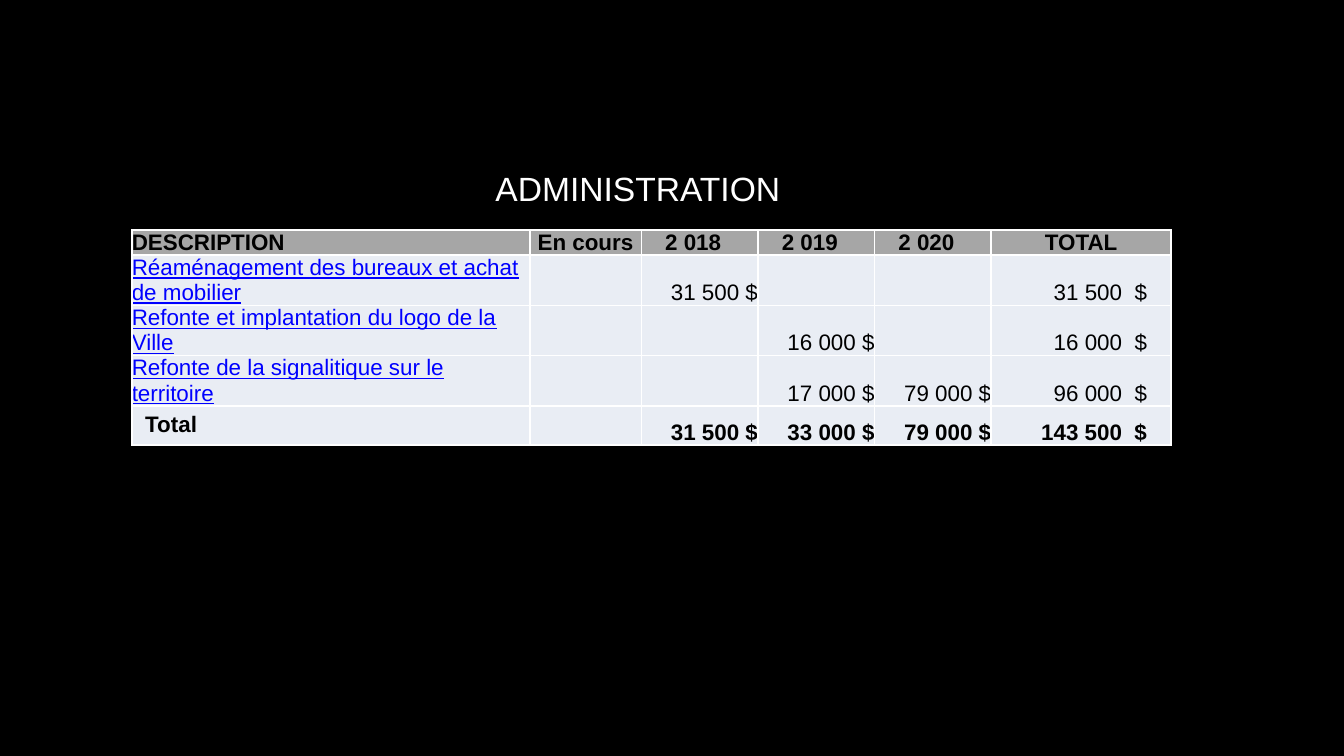
"""Builds the administration budget slide with its table of projects by year."""
from lxml import etree
from pptx import Presentation
from pptx.dml.color import RGBColor
from pptx.enum.text import MSO_ANCHOR, PP_ALIGN
from pptx.oxml.ns import qn
from pptx.util import Pt

LEFT, CENTER, RIGHT = PP_ALIGN.LEFT, PP_ALIGN.CENTER, PP_ALIGN.RIGHT
TOP, BOTTOM = MSO_ANCHOR.TOP, MSO_ANCHOR.BOTTOM
BLACK = RGBColor(0x00, 0x00, 0x00)
WHITE = RGBColor(0xFF, 0xFF, 0xFF)
GREY = RGBColor(0xA6, 0xA6, 0xA6)
PALE = RGBColor(0xE9, 0xED, 0xF4)
BLUE = RGBColor(0x00, 0x00, 0xFF)

TITLE = "ADMINISTRATION"
ROWS = [
    ["DESCRIPTION", "En cours", "2 018", "2 019", "2 020", "TOTAL"],
    ["Réaménagement des bureaux et achat de mobilier", "", "31 500 $", "", "", "31 500  $"],
    ["Refonte et implantation du logo de la Ville", "", "", "16 000 $", "", "16 000  $"],
    ["Refonte de la signalitique sur le territoire", "", "", "17 000 $", "79 000 $", "96 000  $"],
    ["Total", "", "31 500 $", "33 000 $", "79 000 $", "143 500  $"],
]
COLUMN_WIDTHS = [213.2, 59.8, 62.5, 62.5, 62.5, 96.4]
ROW_HEIGHTS = [13.4, 26.8, 26.8, 26.8, 20.9]
TABLE_LEFT, TABLE_TOP = 70.6, 123.2
TITLE_BOX = {"left": 257.5, "top": 86.4, "width": 168.5, "height": 28.8}
LAST_ROW, LAST_COLUMN = len(ROWS) - 1, len(COLUMN_WIDTHS) - 1
HEADER_FONT = {"name": "Arial", "size": Pt(12), "bold": True, "underline": False}
PROJECT_FONT = {**HEADER_FONT, "bold": False, "underline": True}
AMOUNT_FONT = {**HEADER_FONT, "bold": False}


def apply(target, values):
    for name, value in values.items():
        setattr(target, name, value)


def add_borders(cell):
    properties = cell._tc.get_or_add_tcPr()
    for position, side in enumerate(("lnL", "lnR", "lnT", "lnB")):
        line = etree.Element(qn(f"a:{side}"), w=str(Pt(1)))
        fill = etree.SubElement(line, qn("a:solidFill"))
        etree.SubElement(fill, qn("a:srgbClr"), val=str(WHITE))
        properties.insert(position, line)


def cell_layout(row, column):
    margins = dict.fromkeys(("margin_left", "margin_top", "margin_right", "margin_bottom"), Pt(0))
    layout = {**margins, "vertical_anchor": BOTTOM}
    if row == LAST_ROW and column == 0:
        layout.update(margin_left=Pt(7.2), margin_top=Pt(3.6), vertical_anchor=TOP)
    elif row == 0 and 1 < column < LAST_COLUMN:
        layout["margin_right"] = Pt(7)
    elif row > 0 and column == LAST_COLUMN:
        layout["margin_right"] = Pt(12.9)
    return layout


def cell_font(row, column):
    if row in (0, LAST_ROW):
        return HEADER_FONT, BLACK
    return (PROJECT_FONT, BLUE) if column == 0 else (AMOUNT_FONT, BLACK)


def add_title(slide):
    title = slide.shapes.title
    apply(title, {side: Pt(length) for side, length in TITLE_BOX.items()})
    frame = title.text_frame
    frame.text = TITLE
    apply(frame, {"word_wrap": False, "vertical_anchor": TOP})
    paragraph = frame.paragraphs[0]
    paragraph.alignment = CENTER
    font = paragraph.runs[0].font
    apply(font, {"name": "Arial", "size": Pt(18)})
    font.color.rgb = WHITE


def add_budget(slide):
    budget = slide.shapes.add_table(
        len(ROWS), len(COLUMN_WIDTHS), Pt(TABLE_LEFT), Pt(TABLE_TOP),
        Pt(sum(COLUMN_WIDTHS)), Pt(sum(ROW_HEIGHTS))).table
    apply(budget, {"first_row": False, "horz_banding": False})
    for column, width in zip(budget.columns, COLUMN_WIDTHS):
        column.width = Pt(width)
    for row, height in zip(budget.rows, ROW_HEIGHTS):
        row.height = Pt(height)
    for r, texts in enumerate(ROWS):
        for c, text in enumerate(texts):
            cell = budget.cell(r, c)
            apply(cell, cell_layout(r, c))
            cell.fill.solid()
            cell.fill.fore_color.rgb = PALE if r else GREY
            add_borders(cell)
            paragraph = cell.text_frame.paragraphs[0]
            paragraph.alignment = LEFT if c == 0 else RIGHT if r else CENTER
            paragraph.font.size = Pt(12)
            if text:
                run = paragraph.add_run()
                run.text = text
                font_values, color = cell_font(r, c)
                apply(run.font, font_values)
                run.font.color.rgb = color


def main():
    deck = Presentation()
    apply(deck, {"slide_width": Pt(720), "slide_height": Pt(405)})
    slide = deck.slides.add_slide(deck.slide_layouts[5])
    slide.background.fill.solid()
    slide.background.fill.fore_color.rgb = BLACK
    add_budget(slide)
    add_title(slide)
    deck.save("out.pptx")


if __name__ == "__main__":
    main()
